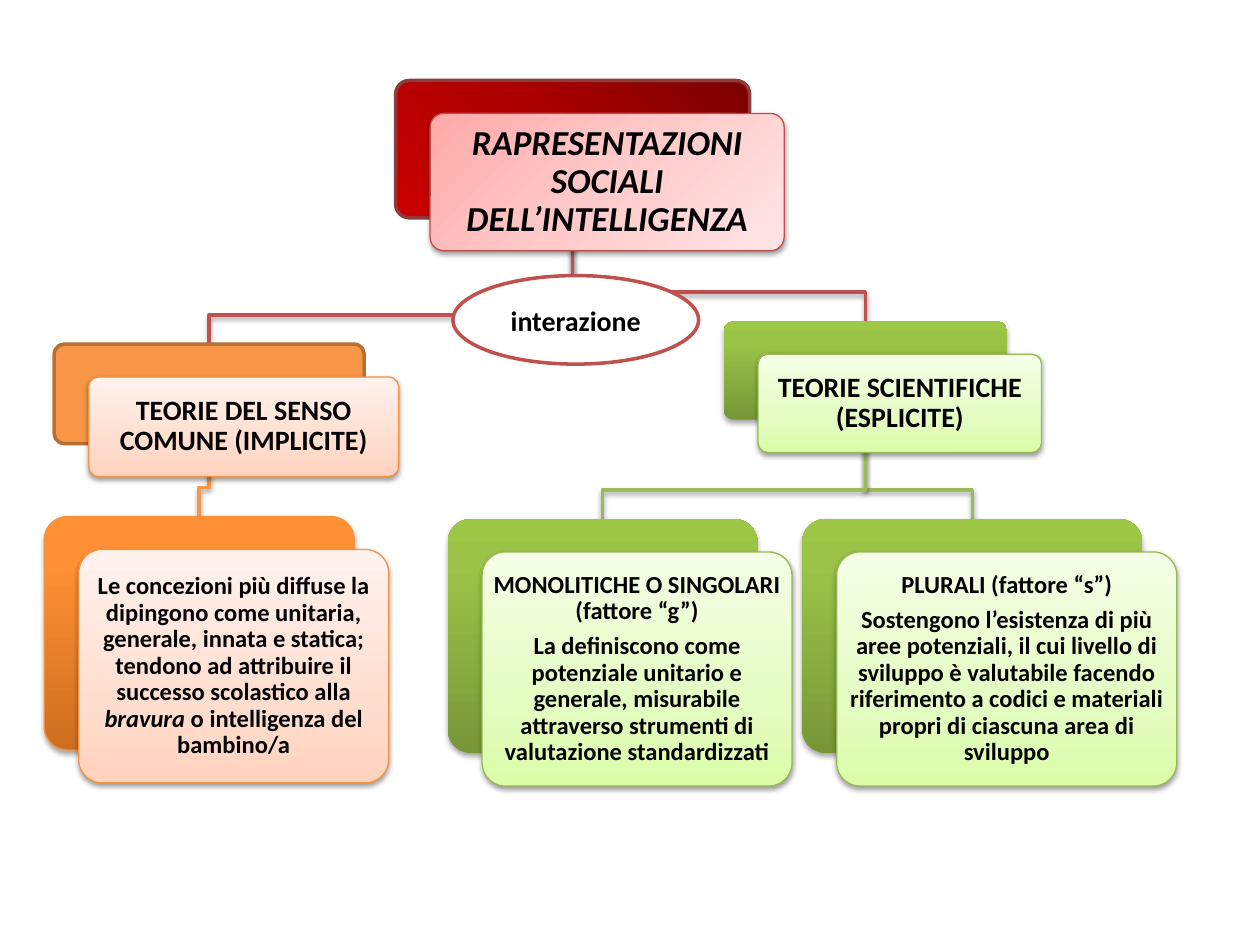
"""Builds a slide with a hierarchy of social representations of intelligence."""
import pptx
import pptx.dml.color
import pptx.enum.shapes
import pptx.enum.text
import pptx.oxml
import pptx.oxml.ns
import pptx.util

Pt = pptx.util.Pt
Kind = pptx.enum.shapes.MSO_SHAPE
STEP = (19.7, 18.8)
BEND = 16.6
UP = '<a:lin ang="16200000" scaled="0"/>'
SLANT = '<a:lin ang="2700000" scaled="0"/>'
CORNER = '<a:path path="circle"><a:fillToRect l="100000" b="100000"/></a:path>'

HEX = {
    "black": "000000", "white": "FFFFFF",
    "red": "C0504D", "redrim": "BF4C48", "wine": "8E3B39",
    "orange": "F79646", "rim": "F69240", "brown": "B76F34",
    "green": "9BBB59", "leaf": "98B955",
}
BLEND = {
    "ruby": (CORNER, (0, "790000"), (50, "AC0000"), (100, "CC0000")),
    "rose": (SLANT, (0, "FFA9A9"), (50, "FFCACA"), (100, "FFE5E5")),
    "rust": (UP, (0, "CC6E20"), (80, "FF9034"), (100, "FF9136")),
    "peach": (UP, (0, "FFD2BD"), (35, "FFDED0"), (100, "FFF2ED")),
    "moss": (UP, (0, "779737"), (80, "9BC348"), (100, "9DC746")),
    "lime": (UP, (0, "DAFDA7"), (35, "E4FCC2"), (100, "F5FFE7")),
}
BOX = {
    "root": (226.1, 46, 202.3, 78.5),
    "sense": (31, 196.6, 177.1, 56.9),
    "common": (25.3, 295.2, 177.1, 133.4),
    "science": (413.5, 183.6, 162, 56.2),
    "single": (255.8, 296.6, 177.1, 133.8),
    "plural": (458.4, 296.6, 194.4, 133.8),
}


def color(name):
    return pptx.dml.color.RGBColor.from_string(HEX[name])


def paint(shape, fill):
    if fill not in BLEND:
        shape.fill.solid()
        shape.fill.fore_color.rgb = color(fill)
        return
    way, *stops = BLEND[fill]
    marks = "".join(
        f'<a:gs pos="{pos * 1000}"><a:srgbClr val="{tone}"/></a:gs>'
        for pos, tone in stops)
    shape.fill.background()
    props = shape._element.spPr
    blank = props.find(pptx.oxml.ns.qn("a:noFill"))
    props.replace(blank, pptx.oxml.parse_xml(
        f'<a:gradFill {pptx.oxml.ns.nsdecls("a")} rotWithShape="1">'
        f'<a:gsLst>{marks}</a:gsLst>{way}</a:gradFill>'))


def edge(shape, line, width):
    if line is None:
        shape.line.fill.background()
    else:
        shape.line.color.rgb = color(line)
        shape.line.width = Pt(width)


def shade(shape, alpha=38, dist=1.6):
    shape.shadow.inherit = False
    if alpha:
        glow = shape._element.spPr.find(pptx.oxml.ns.qn("a:effectLst"))
        glow.append(pptx.oxml.parse_xml(
            f'<a:outerShdw {pptx.oxml.ns.nsdecls("a")} blurRad="{Pt(3.1)}" '
            f'dist="{Pt(dist)}" dir="5400000" rotWithShape="0">'
            f'<a:srgbClr val="{HEX["black"]}"><a:alpha val="{alpha * 1000}"/>'
            '</a:srgbClr></a:outerShdw>'))


def text(frame, paras, size, pad=None, lead=None, after=0, slant=False):
    frame.word_wrap = True
    frame.vertical_anchor = pptx.enum.text.MSO_ANCHOR.MIDDLE
    if pad is not None:
        frame.margin_left = frame.margin_right = Pt(pad)
        frame.margin_top = frame.margin_bottom = Pt(pad)
    for num, runs in enumerate(paras):
        para = frame.add_paragraph() if num else frame.paragraphs[0]
        para.alignment = pptx.enum.text.PP_ALIGN.CENTER
        para.line_spacing = lead
        para.space_after = Pt(after)
        for spot, words in enumerate(runs):
            run = para.add_run()
            run.text = words
            run.font.name = "Calibri"
            run.font.size = Pt(size)
            run.font.bold = True
            run.font.italic = slant or spot % 2 == 1
            run.font.color.rgb = color("black")


def plate(slide, box, fill, line, width, alpha=38, dist=1.6,
          kind=Kind.ROUNDED_RECTANGLE):
    shape = slide.shapes.add_shape(kind, *map(Pt, box))
    if kind == Kind.ROUNDED_RECTANGLE:
        shape.adjustments[0] = 0.1
    paint(shape, fill)
    edge(shape, line, width)
    shade(shape, alpha, dist)
    return shape


def card(slide, name, back, front, paras, size, slant=False):
    left, top, wide, high = BOX[name]
    face = (left + STEP[0], top + STEP[1], wide, high)
    plate(slide, BOX[name], *back)
    plate(slide, face, *front)
    label = slide.shapes.add_textbox(*map(Pt, face))
    text(label.text_frame, paras, size, pad=size * 0.3, lead=0.9,
         after=size * 0.35, slant=slant)


def link(slide, start, end, line):
    left, top, wide, high = BOX[start]
    goal, stop, span, _ = BOX[end]
    begin, mid, last = left + wide / 2, stop - BEND, goal + span / 2
    trace = slide.shapes.build_freeform(Pt(begin), Pt(top + high))
    trace.add_line_segments(
        [(Pt(begin), Pt(mid)), (Pt(last), Pt(mid)), (Pt(last), Pt(stop))],
        close=False)
    shape = trace.convert_to_shape()
    shape.fill.background()
    edge(shape, line, 2)
    shade(shape)


def main():
    deck = pptx.Presentation()
    deck.slide_width, deck.slide_height = Pt(720), Pt(540)
    slide = deck.slides.add_slide(deck.slide_layouts[6])

    for start, end, line in (
            ("science", "plural", "green"), ("science", "single", "green"),
            ("root", "science", "red"), ("sense", "common", "orange"),
            ("root", "sense", "red")):
        link(slide, start, end, line)

    peach = ("peach", "rim", 0.75)
    moss = ("moss", None, 0, 35, 1.8)
    lime = ("lime", "leaf", 0.75)
    card(slide, "root", ("ruby", "wine", 2, 0), ("rose", "redrim", 0.75),
         [["RAPRESENTAZIONI SOCIALI DELL’INTELLIGENZA"]], 20, slant=True)
    card(slide, "sense", ("orange", "brown", 2, 0), peach,
         [["TEORIE DEL SENSO COMUNE (IMPLICITE)"]], 16)
    card(slide, "common", ("rust", "rim", 0.75, 35, 1.8), peach,
         [["Le concezioni più diffuse la dipingono come unitaria, generale, "
           "innata e statica; tendono ad attribuire il successo scolastico "
           "alla ", "bravura", " o intelligenza del bambino/a"]], 14)
    card(slide, "science", moss, lime,
         [["TEORIE SCIENTIFICHE (ESPLICITE)"]], 16)
    card(slide, "single", moss, lime,
         [["MONOLITICHE O SINGOLARI (fattore “g”)"],
          ["La definiscono come potenziale unitario e generale, misurabile "
           "attraverso strumenti di valutazione standardizzati"]], 14)
    card(slide, "plural", moss, lime,
         [["PLURALI (fattore “s”)"],
          ["Sostengono l’esistenza di più aree potenziali, il cui livello di "
           "sviluppo è valutabile facendo riferimento a codici e materiali "
           "propri di ciascuna area di sviluppo"]], 14)

    oval = plate(slide, (258.8, 157.5, 140.4, 50.6), "white", "red", 2, 0,
                 kind=Kind.OVAL)
    text(oval.text_frame, [["interazione"]], 16)
    deck.save("out.pptx")


if __name__ == "__main__":
    main()
